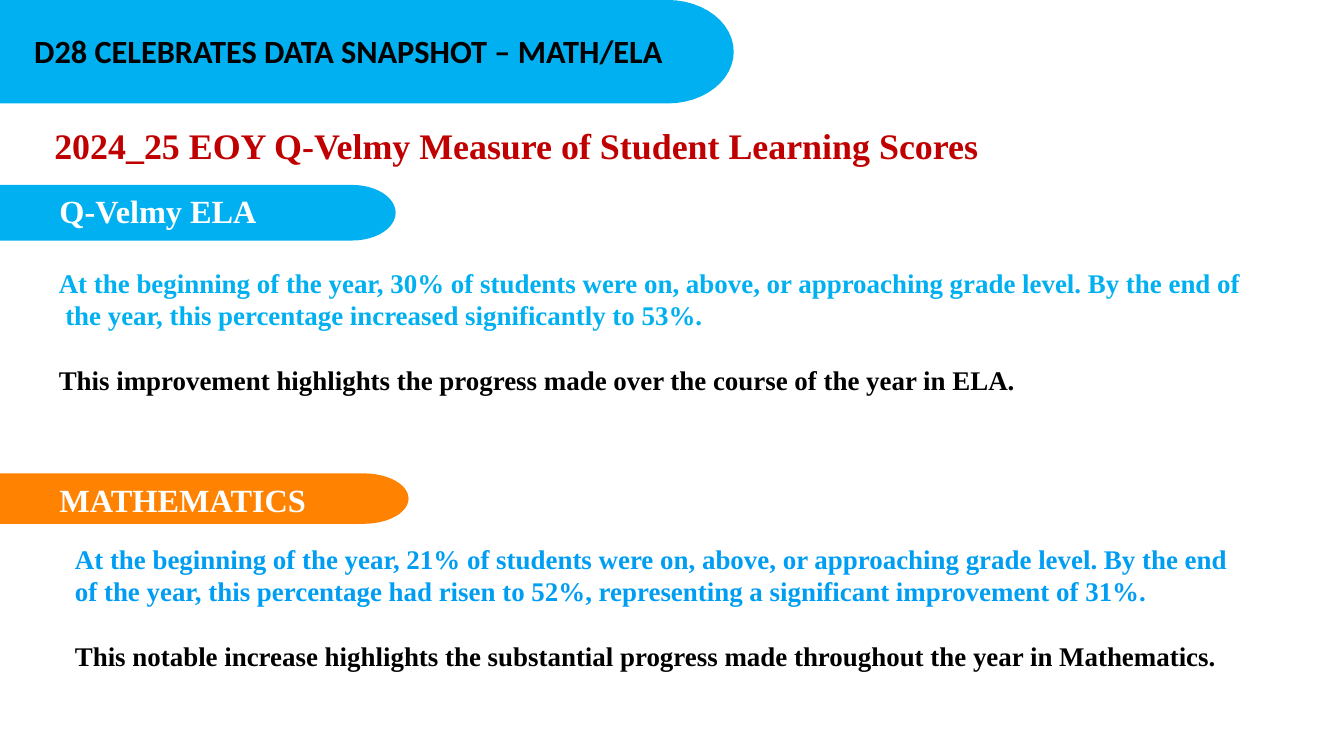
import math
from dataclasses import dataclass

from pptx import Presentation
from pptx.dml.color import RGBColor
from pptx.enum.text import MSO_ANCHOR
from pptx.util import Inches, Pt

TOP = MSO_ANCHOR.TOP
SLIDE_WIDTH, SLIDE_HEIGHT = 20.79, 11.69
ARC_STEPS = 24


@dataclass(frozen=True)
class Theme:
    blue: str = "00B0F0"
    bright_blue: str = "009EF3"
    orange: str = "FF8201"
    red: str = "C00000"
    white: str = "FFFFFF"
    black: str = "000000"
    header_font: str = "Calibri"
    body_font: str = "Times New Roman"
    title_size: int = 40
    heading_size: int = 36
    body_size: int = 30
    body_pitch: int = 36


THEME = Theme()


def add_banner(page, box, straight_share, color):
    """Bar whose right end is half an ellipse, starting at a share of its width."""
    left, top, width, height = box
    straight = width * straight_share
    middle = top + height / 2
    angles = [math.pi * (step / ARC_STEPS - 0.5) for step in range(ARC_STEPS + 1)]
    arc = [(Inches(left + straight + (width - straight) * math.cos(angle)),
            Inches(middle + height / 2 * math.sin(angle))) for angle in angles]
    builder = page.shapes.build_freeform(Inches(left), Inches(top))
    builder.add_line_segments(arc + [(Inches(left), Inches(top + height))])
    banner = builder.convert_to_shape()
    banner.shadow.inherit = False
    banner.fill.solid()
    banner.fill.fore_color.rgb = RGBColor.from_string(color)
    banner.line.fill.background()


def add_text(page, box, lines, size, font=THEME.body_font, inset=(0, 0.01), pitch=None):
    """Bold text; each line is (words, color, indent in inches, space before in points)."""
    text_box = page.shapes.add_textbox(*map(Inches, box))
    frame = text_box.text_frame
    frame.word_wrap = True
    frame.vertical_anchor = TOP
    frame.margin_left = frame.margin_right = Inches(inset[0])
    frame.margin_top, frame.margin_bottom = Inches(inset[1]), 0
    for index, (words, color, indent, gap) in enumerate(lines):
        para = frame.add_paragraph() if index else frame.paragraphs[0]
        para.text = words
        if indent:
            para._p.get_or_add_pPr().set("marL", str(Inches(indent)))
        if gap:
            para.space_before = Pt(gap)
        if pitch:
            para.line_spacing = Pt(pitch)
        para.font.name = font
        para.font.size = Pt(size)
        para.font.bold = True
        para.font.color.rgb = RGBColor.from_string(color)


def add_header(page, box):
    left, top, width, height = box
    add_banner(page, box, 0.91, THEME.blue)
    add_text(page, (left + 0.43, top + 0.44, width - 0.06, 0.71),
             [("D28 CELEBRATES DATA SNAPSHOT – MATH/ELA", THEME.black, 0, 0)],
             THEME.heading_size, THEME.header_font, (0.1, 0.05))


def add_subject(page, banner_box, color, heading, body_box, findings, inset):
    """Subject banner with its heading, and the findings below it."""
    left, top, width, height = banner_box
    add_banner(page, banner_box, 0.89, color)
    add_text(page, (left + 0.92, top + 0.09, width - 1, 0.62),
             [(heading, THEME.white, 0, 0)], THEME.heading_size)
    add_text(page, body_box, findings, THEME.body_size, inset=inset, pitch=THEME.body_pitch)


def main():
    deck = Presentation()
    deck.slide_width, deck.slide_height = Inches(SLIDE_WIDTH), Inches(SLIDE_HEIGHT)
    page = deck.slides.add_slide(deck.slide_layouts[6])
    add_header(page, (0, 0, 11.35, 1.6))
    add_text(page, (0.84, 1.9, 18.83, 0.68),
             [("2024_25 EOY Q-Velmy Measure of Student Learning Scores", THEME.red, 0, 0)],
             THEME.title_size)
    add_subject(
        page, (0, 2.86, 6.12, 0.86), THEME.blue, "Q-Velmy ELA", (0.91, 4.11, 19.3, 2.03),
        [("At the beginning of the year, 30% of students were on, above, or approaching "
          "grade level. By the end of", THEME.blue, 0, 0),
         ("the year, this percentage increased significantly to 53%.", THEME.blue, 0.1, 0),
         ("This improvement highlights the progress made over the course of the year in ELA.",
          THEME.black, 0, THEME.body_pitch)],
        (0, 0.01))
    add_subject(
        page, (0, 7.32, 6.32, 0.78), THEME.orange, "MATHEMATICS", (1.06, 8.34, 18.38, 2.12),
        [("At the beginning of the year, 21% of students were on, above, or approaching "
          "grade level. By the end of the year, this percentage had risen to 52%, "
          "representing a significant improvement of 31%.", THEME.bright_blue, 0, 0),
         ("This notable increase highlights the substantial progress made throughout the "
          "year in Mathematics.", THEME.black, 0, THEME.body_pitch)],
        (0.1, 0.05))
    deck.save("out.pptx")


if __name__ == "__main__":
    main()
